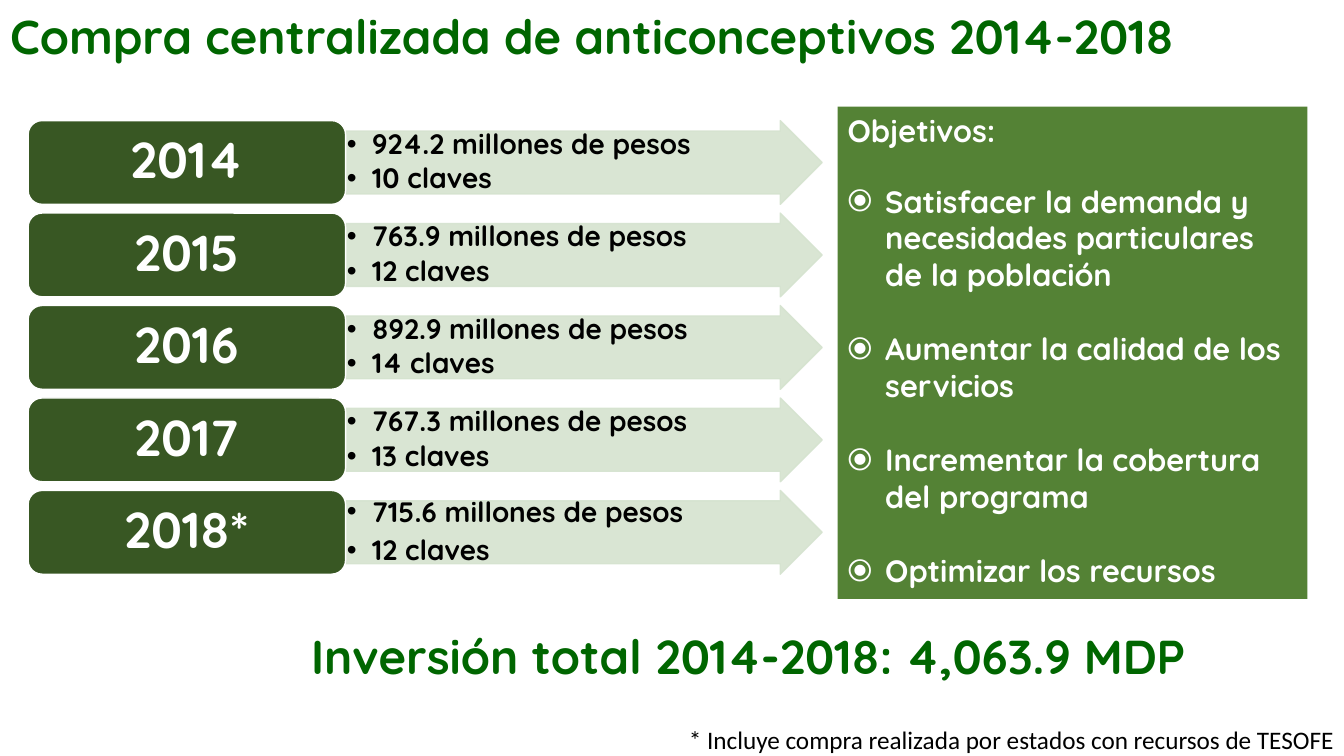
from lxml.etree import SubElement
from pptx import Presentation
from pptx.dml.color import RGBColor
from pptx.enum.shapes import MSO_SHAPE
from pptx.enum.text import MSO_ANCHOR, MSO_AUTO_SIZE, PP_ALIGN
from pptx.oxml.ns import qn
from pptx.util import Cm, Pt

WHITE = RGBColor(0xFF, 0xFF, 0xFF)
BLACK = RGBColor(0, 0, 0)
HEADING = RGBColor(0x00, 0x66, 0x00)
DARK_GREEN = RGBColor(0x38, 0x57, 0x23)
PANEL_GREEN = RGBColor(0x54, 0x82, 0x35)
PALE_GREEN = RGBColor(0xD5, 0xE3, 0xCF)

PURCHASES = [
    ("2014", "924.2", 10),
    ("2015", "763.9", 12),
    ("2016", "892.9", 14),
    ("2017", "767.3", 13),
    ("2018*", "715.6", 12),
]
OBJECTIVES = [
    "Satisfacer la demanda y necesidades particulares de la población",
    "Aumentar la calidad de los servicios",
    "Incrementar la cobertura del programa",
    "Optimizar los recursos",
]


def write(box, text, size=20, color=BLACK, font="Quicksand", bold=True, align=PP_ALIGN.LEFT,
          spacing=1.0, before=0, after=0, bullet=None, indent=0):
    frame = box.text_frame
    para = frame.add_paragraph() if frame.text else frame.paragraphs[0]
    para.alignment = align
    para.line_spacing = spacing
    para.space_before = Pt(before)
    para.space_after = Pt(after)
    if bullet:
        properties = para._p.get_or_add_pPr()
        properties.set("marL", str(Cm(indent)))
        properties.set("indent", str(-Cm(indent)))
        bullet_color = SubElement(properties, qn("a:buClr"))
        SubElement(bullet_color, qn("a:srgbClr"), val=str(color))
        SubElement(properties, qn("a:buFont"), typeface="Arial")
        SubElement(properties, qn("a:buChar"), char=bullet)
    span = para.add_run()
    span.text = text
    span.font.name = font
    span.font.size = Pt(size)
    span.font.bold = bold
    span.font.color.rgb = color


class Slide:
    def __init__(self, deck):
        self.page = deck.slides.add_slide(deck.slide_layouts[5])

    def place(self, box, left, top, width, height):
        box.left, box.top, box.width, box.height = Cm(left), Cm(top), Cm(width), Cm(height)

    def frame(self, box, anchor, margin=None):
        frame = box.text_frame
        frame.word_wrap = True
        frame.auto_size = MSO_AUTO_SIZE.NONE
        frame.vertical_anchor = anchor
        if margin is not None:
            frame.margin_left = frame.margin_right = Cm(margin)
            frame.margin_top = frame.margin_bottom = Cm(margin)

    def title(self, text, *area, **style):
        box = self.page.shapes.title
        self.place(box, *area)
        self.frame(box, MSO_ANCHOR.MIDDLE)
        write(box, text, **style)

    def label(self, text, *area, **style):
        box = self.page.shapes.add_textbox(*map(Cm, area))
        self.frame(box, MSO_ANCHOR.TOP)
        write(box, text, **style)

    def shape(self, kind, *area, fill, line=None, alpha=None, anchor=MSO_ANCHOR.MIDDLE, margin=None):
        box = self.page.shapes.add_shape(kind, *map(Cm, area))
        box.shadow.inherit = False
        box.fill.solid()
        box.fill.fore_color.rgb = fill
        if line is None:
            box.line.fill.background()
        else:
            box.line.color.rgb = line
            box.line.width = Pt(1)
        if alpha:
            for tint in box._element.spPr.iter(qn("a:srgbClr")):
                SubElement(tint, qn("a:alpha"), val=str(alpha * 1000))
        self.frame(box, anchor, margin)
        return box


def main():
    deck = Presentation()
    deck.slide_width, deck.slide_height = Cm(33.87), Cm(19.05)
    slide = Slide(deck)
    slide.title("Compra centralizada de anticonceptivos 2014-2018", 0, 0.05, 31.12, 1.7,
                size=34, color=HEADING)

    for row, (year, amount, keys) in enumerate(PURCHASES):
        top = 3.04 + row * 2.33
        arrow = slide.shape(MSO_SHAPE.RIGHT_ARROW, 8.71, top, 12.01, 2.11,
                            fill=PALE_GREEN, line=PALE_GREEN, alpha=90, margin=0.03)
        arrow.adjustments[0] = 0.75
        after = 6 if year.endswith("*") else 3
        for text in (f"{amount} millones de pesos", f"{keys} claves"):
            write(arrow, text, spacing=0.9, after=after, bullet="•", indent=0.64)
        badge = slide.shape(MSO_SHAPE.ROUNDED_RECTANGLE, 0.71, top, 8, 2.11,
                            fill=DARK_GREEN, line=WHITE, margin=0.18)
        write(badge, year, size=36, color=WHITE, align=PP_ALIGN.CENTER, spacing=0.9, after=6)

    panel = slide.shape(MSO_SHAPE.RECTANGLE, 21.11, 2.69, 11.84, 12.4,
                        fill=PANEL_GREEN, anchor=MSO_ANCHOR.TOP)
    write(panel, "Objetivos:", size=22, color=WHITE)
    for position, objective in enumerate(OBJECTIVES):
        write(panel, objective, size=22, color=WHITE, before=26.5 if position else 24,
              bullet="⦿", indent=0.95)

    slide.label("Inversión total 2014-2018: 4,063.9 MDP", 7.59, 15.67, 24.41, 1.7,
                size=34, color=HEADING)
    slide.label("* Incluye compra realizada por estados con recursos de TESOFE",
                14.71, 18.13, 19.16, 0.92, size=18, font="Calibri", bold=False,
                align=PP_ALIGN.RIGHT)
    deck.save("out.pptx")


if __name__ == "__main__":
    main()
